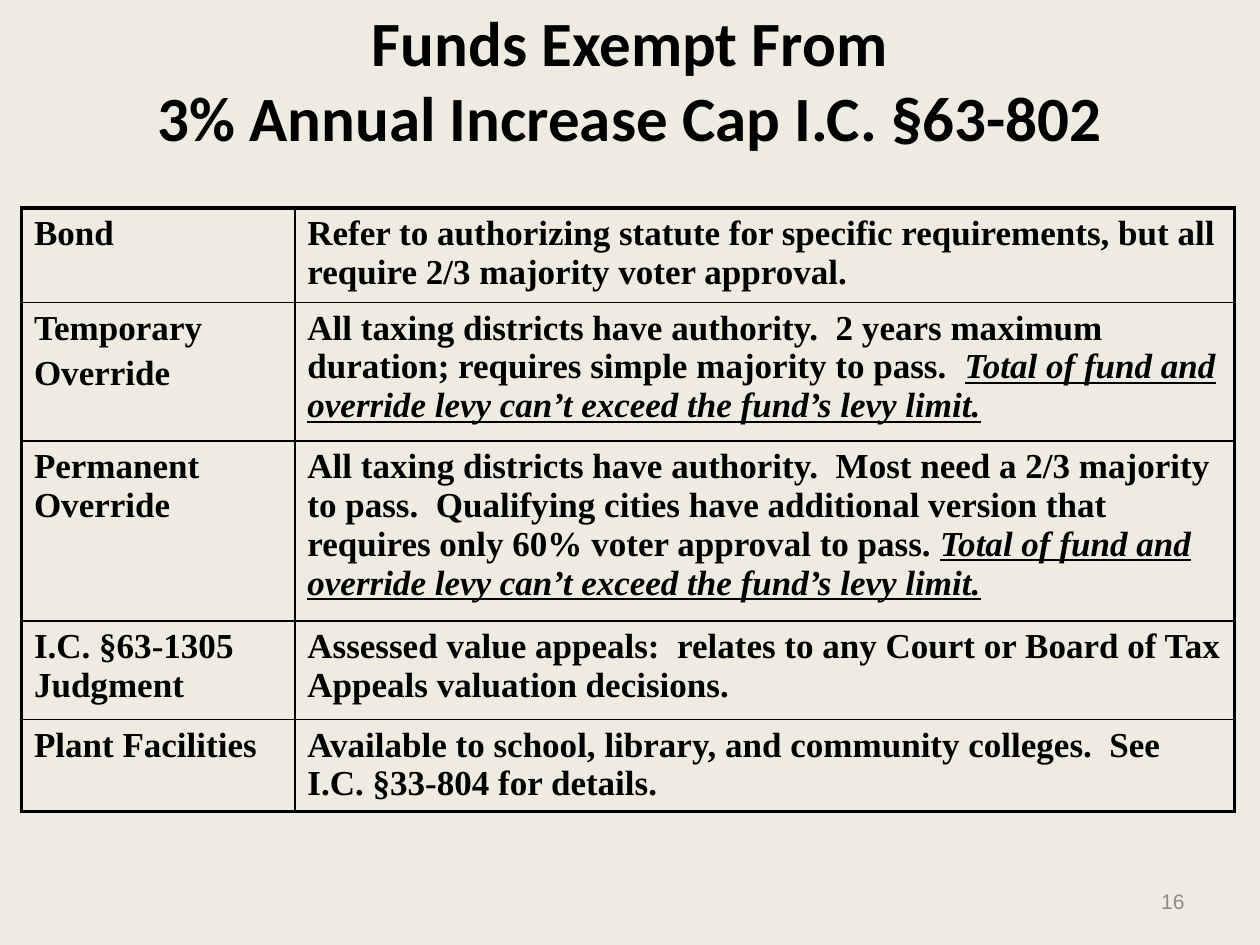
from dataclasses import dataclass

from lxml.etree import SubElement
from pptx import Presentation
from pptx.dml.color import RGBColor
from pptx.enum.text import MSO_ANCHOR, PP_ALIGN
from pptx.oxml.ns import qn
from pptx.util import Inches, Pt

BLACK = RGBColor(0x00, 0x00, 0x00)
GRAY = RGBColor(0x8C, 0x8C, 0x8C)
CREAM = RGBColor(0xEE, 0xEC, 0xE1)

OUTER, INNER = Pt(2.25), Pt(1)
COL_WIDTHS = (2.17, 7.46)
LEVY_LIMIT = "Total of fund and override levy can’t exceed the fund’s levy limit."


@dataclass(frozen=True)
class Fund:
    height: float
    name: tuple[str, ...]
    rule: str
    emphasis: str = ""


FUNDS = (
    Fund(0.75, ("Bond",),
         "Refer to authorizing statute for specific requirements, but all "
         "require 2/3 majority voter approval."),
    Fund(1.1, ("Temporary", "Override"),
         "All taxing districts have authority.  2 years maximum duration; "
         "requires simple majority to pass.  ", LEVY_LIMIT),
    Fund(1.43, ("Permanent Override",),
         "All taxing districts have authority.  Most need a 2/3 majority to pass.  "
         "Qualifying cities have additional version that requires only 60% voter "
         "approval to pass. ", LEVY_LIMIT),
    Fund(0.78, ("I.C. §63-1305 Judgment",),
         "Assessed value appeals:  relates to any Court or Board of Tax Appeals "
         "valuation decisions."),
    Fund(0.73, ("Plant Facilities",),
         "Available to school, library, and community colleges.  See "
         "I.C. §33-804 for details."),
)


def style(p, font: str, size: float, color: RGBColor, bold: bool = False) -> None:
    p.font.name = font
    p.font.size = Pt(size)
    p.font.color.rgb = color
    p.font.bold = bold


def set_borders(cell, row: int, col: int) -> None:
    outer_sides = {
        "a:lnL": col == 0,
        "a:lnR": col == len(COL_WIDTHS) - 1,
        "a:lnT": row == 0,
        "a:lnB": row == len(FUNDS) - 1,
    }
    props = cell._tc.get_or_add_tcPr()
    for index, (tag, is_outer) in enumerate(outer_sides.items()):
        ln = SubElement(props, qn(tag), w=str(OUTER if is_outer else INNER))
        fill = SubElement(ln, qn("a:solidFill"))
        SubElement(fill, qn("a:srgbClr"), val=str(BLACK))
        props.remove(ln)
        props.insert(index, ln)


def fill_cell(cell, paragraphs: tuple[str, ...], emphasis: str = "") -> None:
    cell.fill.background()
    cell.margin_left = cell.margin_right = Inches(0.1)
    cell.margin_top = cell.margin_bottom = Inches(0.05)
    tf = cell.text_frame
    tf.text = "\n".join(paragraphs)
    if emphasis:
        r = tf.paragraphs[-1].add_run()
        r.text = emphasis
        r.font.italic = r.font.underline = True
    for p in tf.paragraphs:
        p.space_before = Pt(4)
        style(p, "Times New Roman", 20, BLACK, bold=True)


def add_title(s) -> None:
    sp = s.shapes.title
    sp.left, sp.top = Inches(0.25), Inches(0)
    sp.width, sp.height = Inches(9.5), Inches(1.25)
    tf = sp.text_frame
    tf.vertical_anchor = MSO_ANCHOR.MIDDLE
    p = tf.paragraphs[0]
    p.alignment = PP_ALIGN.CENTER
    p.add_run().text = "Funds Exempt From"
    p.add_line_break()
    p.add_run().text = "3% Annual Increase Cap I.C. §63-802"
    style(p, "Calibri", 36, BLACK, bold=True)


def add_fund_table(s) -> None:
    height = sum(fund.height for fund in FUNDS)
    table = s.shapes.add_table(
        len(FUNDS), len(COL_WIDTHS), Inches(0.17), Inches(1.65),
        Inches(sum(COL_WIDTHS)), Inches(height)).table
    table.first_row = table.horz_banding = False
    for column, width in zip(table.columns, COL_WIDTHS):
        column.width = Inches(width)
    for row, fund in enumerate(FUNDS):
        table.rows[row].height = Inches(fund.height)
        fill_cell(table.cell(row, 0), fund.name)
        fill_cell(table.cell(row, 1), (fund.rule,), fund.emphasis)
        for col in range(len(COL_WIDTHS)):
            set_borders(table.cell(row, col), row, col)


def add_page_number(s, number: int) -> None:
    sp = s.shapes.add_textbox(Inches(7.17), Inches(6.95), Inches(2.33), Inches(0.4))
    tf = sp.text_frame
    tf.word_wrap = True
    tf.vertical_anchor = MSO_ANCHOR.MIDDLE
    p = tf.paragraphs[0]
    p.text = str(number)
    p.alignment = PP_ALIGN.RIGHT
    style(p, "Arial", 12, GRAY)


def main() -> None:
    prs = Presentation()
    prs.slide_width, prs.slide_height = Inches(10), Inches(7.5)
    s = prs.slides.add_slide(prs.slide_layouts.get_by_name("Title Only"))
    s.background.fill.solid()
    s.background.fill.fore_color.rgb = CREAM
    add_title(s)
    add_fund_table(s)
    add_page_number(s, 16)
    prs.save("out.pptx")


if __name__ == "__main__":
    main()
